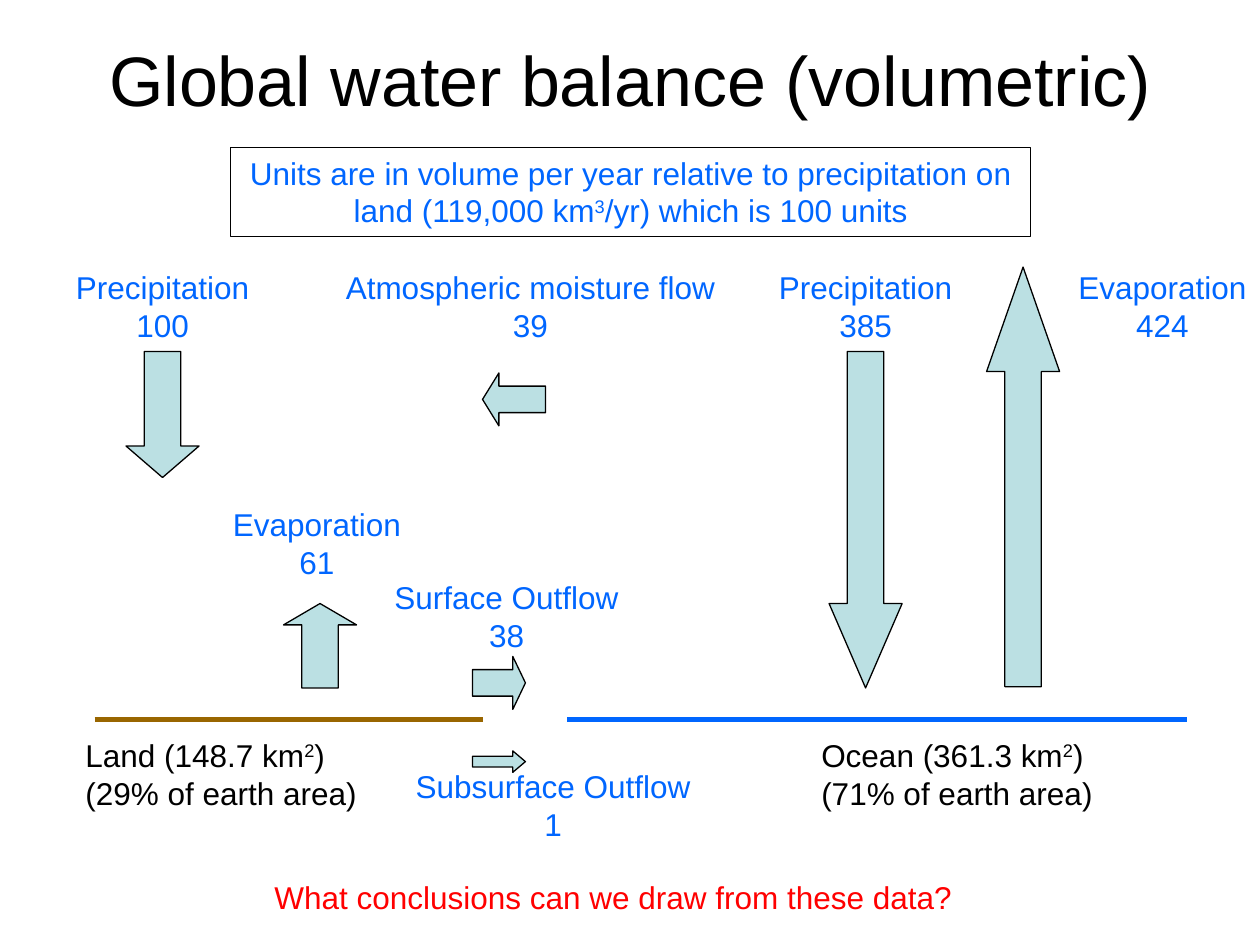
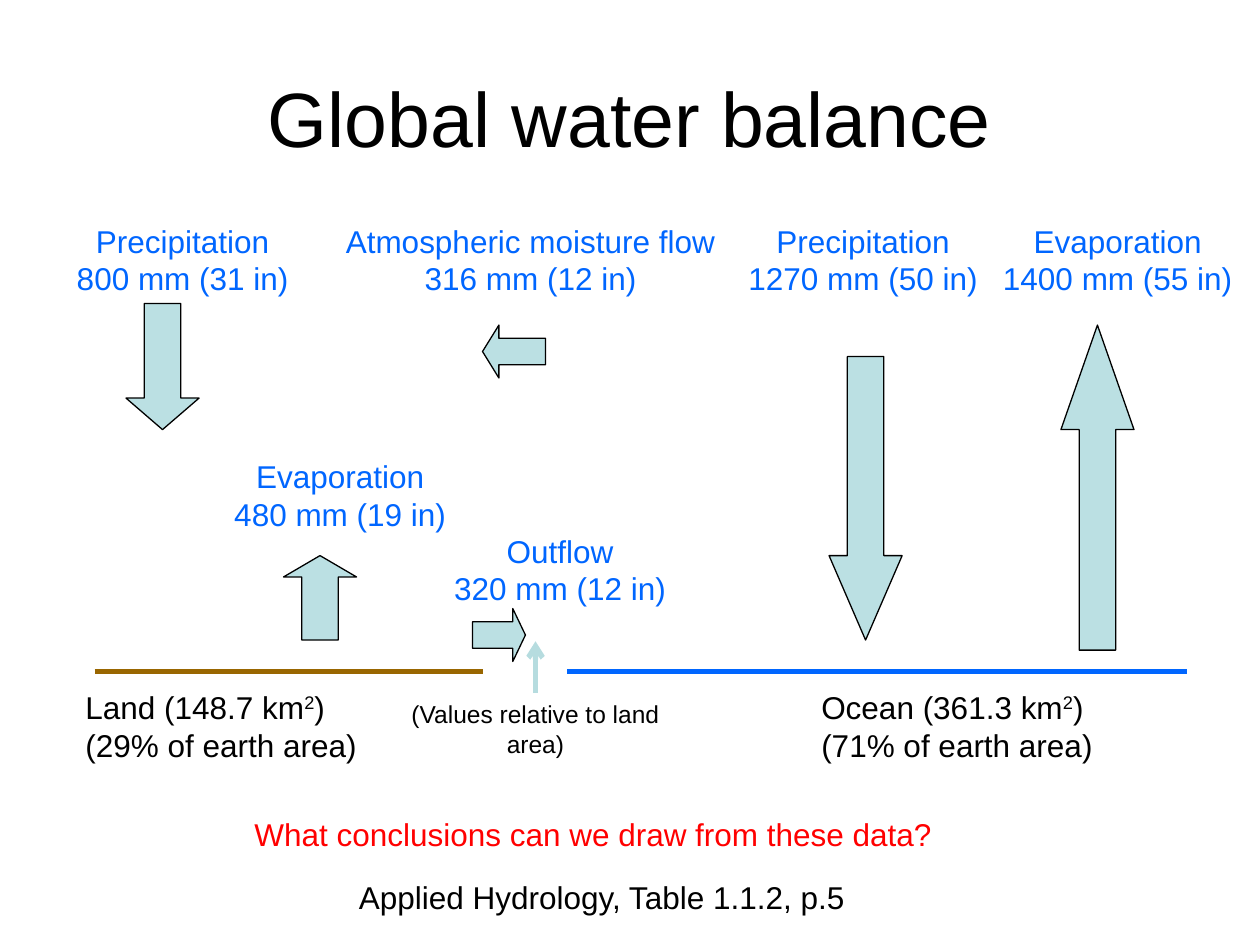
from lxml import etree
from pptx import Presentation
from pptx.dml.color import RGBColor
from pptx.enum.shapes import MSO_CONNECTOR, MSO_SHAPE
from pptx.enum.text import MSO_ANCHOR, MSO_AUTO_SIZE, PP_ALIGN
from pptx.oxml.ns import qn
from pptx.util import Inches, Pt

STRAIGHT = MSO_CONNECTOR.STRAIGHT
DOWN, UP = MSO_SHAPE.DOWN_ARROW, MSO_SHAPE.UP_ARROW
LEFT, RIGHT = MSO_SHAPE.LEFT_ARROW, MSO_SHAPE.RIGHT_ARROW
ALIGN_LEFT, ALIGN_CENTER = PP_ALIGN.LEFT, PP_ALIGN.CENTER
MIDDLE = MSO_ANCHOR.MIDDLE
FIT_TEXT, FIXED_SIZE = MSO_AUTO_SIZE.SHAPE_TO_FIT_TEXT, MSO_AUTO_SIZE.NONE

BLACK = RGBColor(0x00, 0x00, 0x00)
RED = RGBColor(0xFF, 0x00, 0x00)
OCEAN_BLUE = RGBColor(0x00, 0x66, 0xFF)
LAND_BROWN = RGBColor(0x99, 0x66, 0x00)
ARROW_FILL = RGBColor(0xBB, 0xE0, 0xE3)
POINTER = RGBColor(0xB6, 0xDC, 0xDF)
FONT = "Arial"
QUESTION = "What conclusions can we draw from these data?"


def add_text(slide, box, text, color=OCEAN_BLUE, size=18, align=ALIGN_CENTER, wrap=False):
    """Add a text box; each line is a paragraph, and ^...^ marks a superscript."""
    label = slide.shapes.add_textbox(*map(Inches, box))
    frame = label.text_frame
    frame.word_wrap = wrap
    frame.auto_size = FIT_TEXT
    for number, line in enumerate(text.split("\n")):
        paragraph = frame.paragraphs[0] if number == 0 else frame.add_paragraph()
        paragraph.alignment = align
        for part, words in enumerate(line.split("^")):
            run = paragraph.add_run()
            run.text = words
            run.font.name = FONT
            run.font.size = Pt(size)
            run.font.color.rgb = color
            if part % 2:
                run.font._element.set("baseline", "30000")
    return label


def add_line(slide, start, end, color):
    line = slide.shapes.add_connector(STRAIGHT, *map(Inches, start + end))
    line.line.color.rgb = color
    line.line.width = Pt(3)
    etree.SubElement(line._element.spPr, qn("a:effectLst"))
    return line


# Flow labels: box, text, wrap. Flow arrows: direction, box, head length.
SLIDES = [
    {
        "title": "Global water balance (volumetric)",
        "title_top": 0, "title_size": 40, "surface": 5.71,
        "labels": [
            ((0.5, 2.08, 1.58, 0.7), "Precipitation\n100", False),
            ((1.74, 3.96, 1.55, 0.7), "Evaporation\n61", False),
            ((3.03, 4.54, 1.98, 0.7), "Surface Outflow\n38", False),
            ((2.83, 6.04, 3.12, 0.7), "Subsurface Outflow\n1", True),
            ((6.08, 2.08, 1.58, 0.7), "Precipitation\n385", False),
            ((8.45, 2.08, 1.55, 0.7), "Evaporation\n424", False),
            ((2.5, 2.08, 3.42, 0.7), "Atmospheric moisture flow 39", True),
        ],
        "arrows": [
            (RIGHT, (3.75, 5.96, 0.42, 0.17), 0.1),
            (DOWN, (6.58, 2.79, 0.58, 2.67), 0.67),
            (UP, (7.83, 2.12, 0.58, 3.33), 0.83),
        ],
        "question": (2.08, 6.92),
    },
    {
        "title": "Global water balance",
        "title_top": 0.3, "title_size": 44, "surface": 5.33,
        "labels": [
            ((0.5, 1.71, 1.9, 0.71), "Precipitation\n800 mm (31 in)", False),
            ((1.75, 3.58, 1.9, 0.71), "Evaporation\n480 mm (19 in)", False),
            ((3.46, 4.17, 1.97, 0.71), "Outflow\n320 mm (12 in)", False),
            ((5.83, 1.71, 2.04, 0.71), "Precipitation\n1270 mm (50 in)", False),
            ((7.85, 1.71, 2.04, 0.71), "Evaporation\n1400 mm (55 in)", False),
            ((2.5, 1.71, 3.42, 0.7), "Atmospheric moisture flow 316 mm (12 in)", True),
        ],
        "arrows": [
            (DOWN, (6.58, 2.83, 0.58, 2.25), 0.67),
            (UP, (8.42, 2.58, 0.58, 2.58), 0.83),
        ],
        "question": (1.92, 6.42),
    },
]

prs = Presentation()
prs.slide_width, prs.slide_height = Inches(10), Inches(7.5)

for content in SLIDES:
    slide = prs.slides.add_slide(prs.slide_layouts[6])
    surface = content["surface"]
    title = add_text(slide, (0.5, content["title_top"], 9, 1.25), content["title"],
                     BLACK, content["title_size"], wrap=True)
    title.text_frame.auto_size = FIXED_SIZE
    title.text_frame.vertical_anchor = MIDDLE

    # Ground and sea level, with the area of each below
    add_line(slide, (0.75, surface), (3.83, surface), LAND_BROWN)
    add_line(slide, (4.5, surface), (9.42, surface), OCEAN_BLUE)
    for left, area in ((0.58, "Land (148.7 km^2^)\n(29% of earth area)"),
                       (6.42, "Ocean (361.3 km^2^)\n(71% of earth area)")):
        add_text(slide, (left, surface + 0.08, 2.4, 0.7), area, BLACK, align=ALIGN_LEFT)

    # The land-side arrows keep their distance to the surface on both slides
    land_arrows = [
        (DOWN, (1, surface - 2.92, 0.58, 1), 0.25),
        (UP, (2.25, surface - 0.92, 0.58, 0.67), 0.17),
        (RIGHT, (3.75, surface - 0.5, 0.42, 0.42), 0.1),
        (LEFT, (3.83, surface - 2.75, 0.5, 0.42), 0.13),
    ]
    for direction, box, head in land_arrows + content["arrows"]:
        flow = slide.shapes.add_shape(direction, *map(Inches, box))
        flow.adjustments[0] = 0.5
        flow.adjustments[1] = head / min(box[2:])
        flow.shadow.inherit = False
        flow.fill.solid()
        flow.fill.fore_color.rgb = ARROW_FILL
        flow.line.color.rgb = BLACK
        flow.line.width = Pt(0.75)

    for box, text, wrap in content["labels"]:
        add_text(slide, box, text, wrap=wrap)
    add_text(slide, content["question"] + (5.58, 0.4), QUESTION, RED, align=ALIGN_LEFT)

volumetric, depths = prs.slides

units = add_text(volumetric, (1.83, 1.17, 6.35, 0.71),
                 "Units are in volume per year relative to precipitation on land "
                 "(119,000 km^3^/yr) which is 100 units", wrap=True)
units.line.color.rgb = BLACK
units.line.width = Pt(0.75)

add_text(depths, (2.75, 6.92, 4.1, 0.4), "Applied Hydrology, Table 1.1.2, p.5",
         BLACK, align=ALIGN_LEFT)
land_note = add_text(depths, (3.08, 5.5, 2.34, 0.57), "(Values relative to land area)",
                     BLACK, 14, wrap=True)
pointer = add_line(depths, (4.25, 5.5), (4.25, 5.09), POINTER)
pointer.begin_connect(land_note, 0)
etree.SubElement(pointer.line._get_or_add_ln(), qn("a:tailEnd"), type="arrow")

prs.save("out.pptx")
